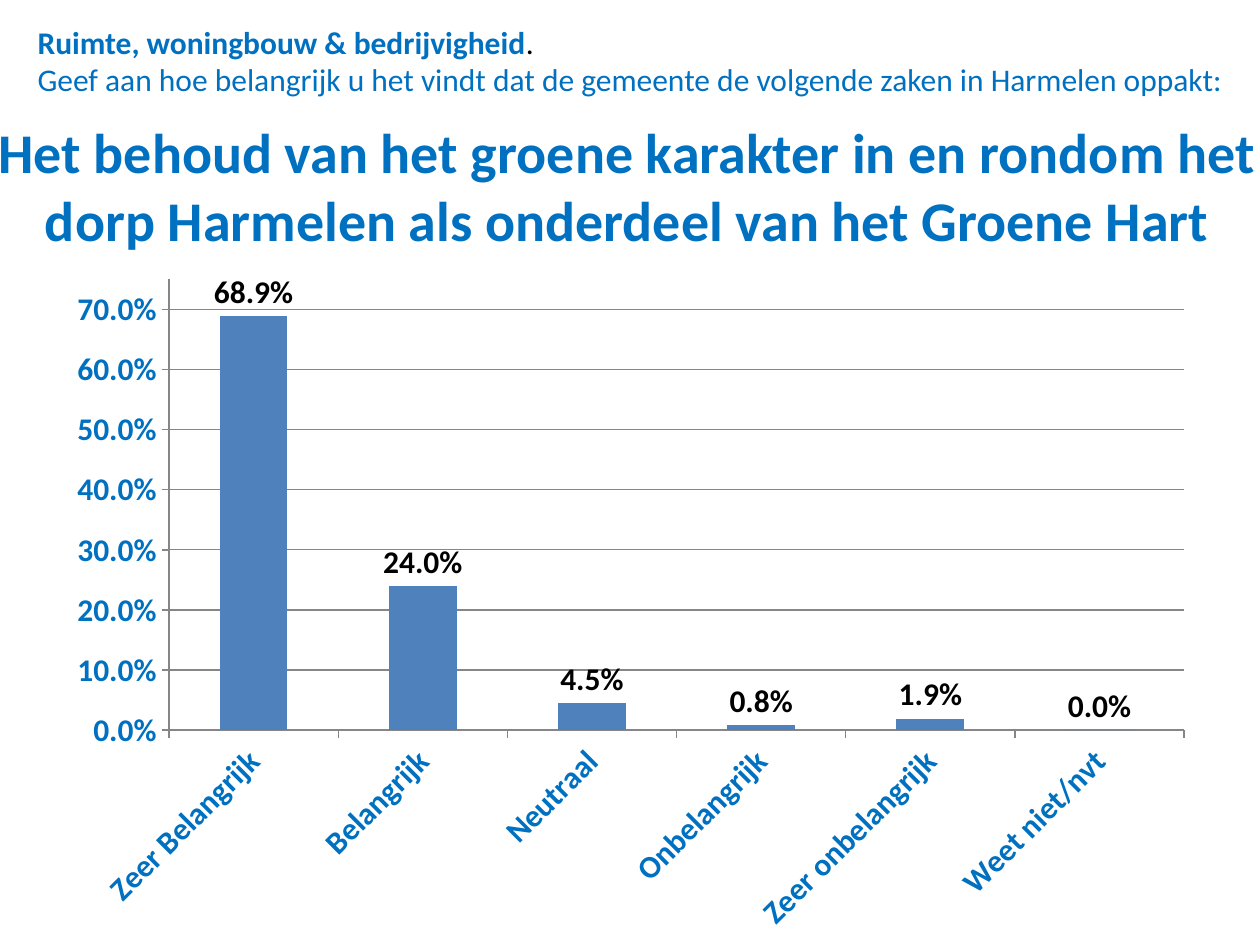
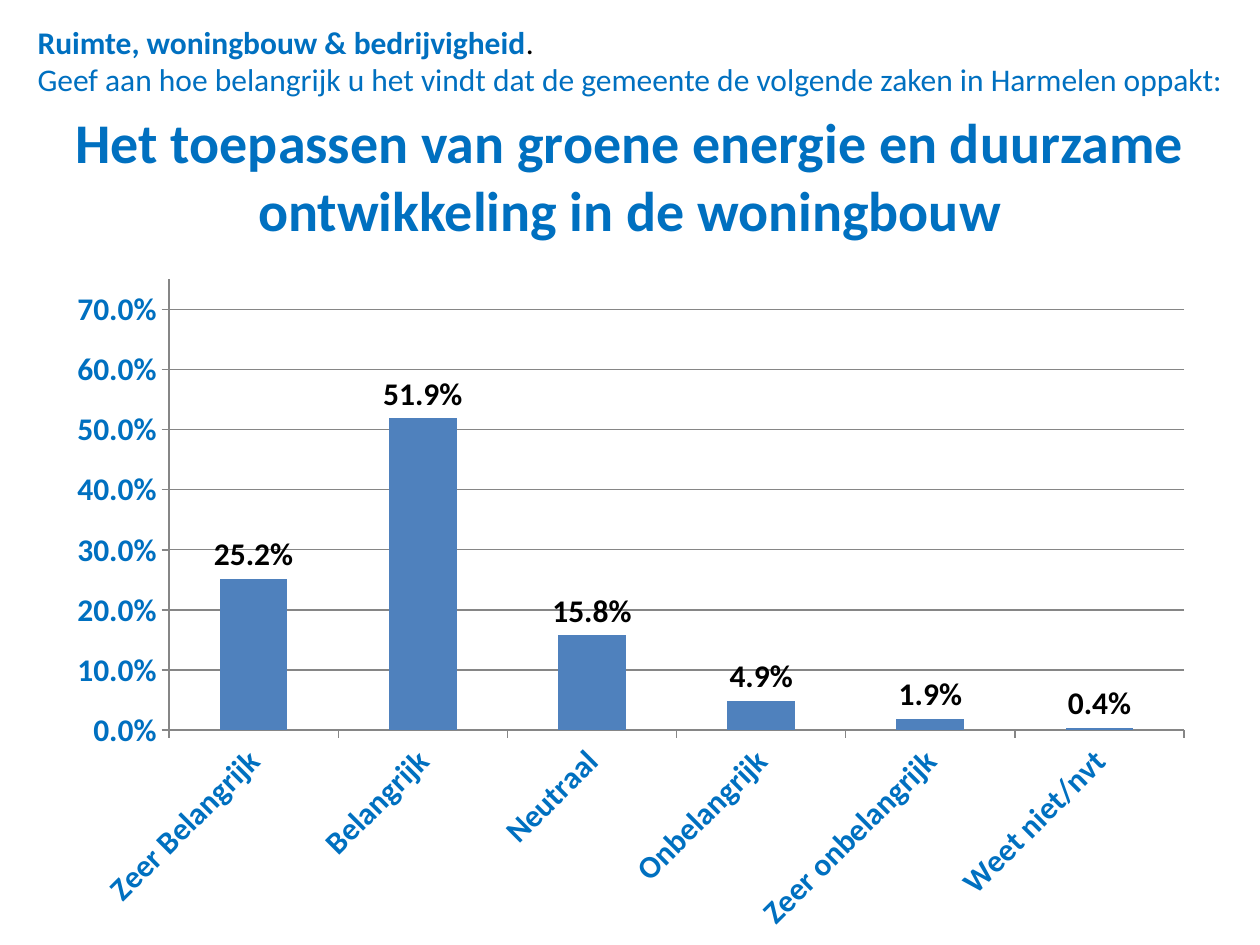
from dataclasses import dataclass

from pptx import Presentation
from pptx.chart.data import CategoryChartData
from pptx.dml.color import RGBColor
from pptx.enum.chart import XL_CHART_TYPE, XL_LABEL_POSITION, XL_TICK_MARK
from pptx.enum.text import MSO_ANCHOR, MSO_AUTO_SIZE, PP_ALIGN
from pptx.util import Pt

COLUMNS = XL_CHART_TYPE.COLUMN_CLUSTERED
OUTSIDE_END = XL_LABEL_POSITION.OUTSIDE_END
TICK_OUT = XL_TICK_MARK.OUTSIDE
MIDDLE = MSO_ANCHOR.MIDDLE
NO_AUTOFIT = MSO_AUTO_SIZE.NONE
CENTER = PP_ALIGN.CENTER

COLORS = {"heading": "0070C0", "column": "4F81BD", "text": "000000", "line": "868686"}
FONT = "Calibri"
PERCENT = "0.0%"
TITLE_ONLY = 5
LABEL_ROTATION = "-2700000"  # 45 degrees, in 60000ths

THEME = "Ruimte, woningbouw & bedrijvigheid"
QUESTION = "Geef aan hoe belangrijk u het vindt dat de gemeente de volgende zaken in Harmelen oppakt:"
ANSWERS = ("Zeer Belangrijk", "Belangrijk", "Neutraal", "Onbelangrijk",
           "Zeer onbelangrijk", "Weet niet/nvt")


@dataclass(frozen=True)
class Frame:
    left: float
    top: float
    width: float
    height: float

    def lengths(self) -> tuple:
        return Pt(self.left), Pt(self.top), Pt(self.width), Pt(self.height)


@dataclass(frozen=True)
class Topic:
    title: str
    title_frame: Frame
    shares: tuple


INTRO_FRAME = Frame(14.4, 9.4, 700.6, 72.7)
CHART_FRAME = Frame(31, 152, 658.8, 388)

TOPICS = (
    Topic("Het behoud van het groene karakter in en rondom het dorp Harmelen "
          "als onderdeel van het Groene Hart",
          Frame(-11.5, 77, 740, 96.5), (0.689, 0.24, 0.045, 0.008, 0.019, 0)),
    Topic("Het toepassen van groene energie en duurzame ontwikkeling in de woningbouw",
          Frame(0, 71.3, 720, 96.5), (0.252, 0.519, 0.158, 0.049, 0.019, 0.004)),
)


def color(name: str) -> RGBColor:
    return RGBColor.from_string(COLORS[name])


def style_font(font, size: float, color_name: str, bold: bool) -> None:
    font.name = FONT
    font.size = Pt(size)
    font.bold = bold
    font.color.rgb = color(color_name)


def set_title(page, topic: Topic) -> None:
    title = page.shapes.title
    title.left, title.top, title.width, title.height = topic.title_frame.lengths()
    frame = title.text_frame
    frame.text = topic.title
    frame.word_wrap = True
    frame.auto_size = NO_AUTOFIT
    frame.vertical_anchor = MIDDLE
    frame.margin_bottom = Pt(42.6)  # lifts the title clear of the chart
    para = frame.paragraphs[0]
    para.alignment = CENTER
    style_font(para.font, 32, "heading", True)


def add_intro(page) -> None:
    box = page.shapes.add_textbox(*INTRO_FRAME.lengths())
    box.text_frame.word_wrap = True
    para = box.text_frame.paragraphs[0]
    para.font.name = FONT
    para.font.size = Pt(18)
    for text, color_name, bold in ((THEME, "heading", True), (".", "text", False),
                                   (QUESTION, "heading", False)):
        if text == QUESTION:
            para.add_line_break()
        span = para.add_run()
        span.text = text
        span.font.bold = bold
        span.font.color.rgb = color(color_name)


def add_answer_chart(page, shares: tuple) -> None:
    data = CategoryChartData(number_format=PERCENT)
    data.categories = ANSWERS
    data.add_series("Series 1", shares)
    chart = page.shapes.add_chart(COLUMNS, *CHART_FRAME.lengths(), data).chart
    chart.has_title = False
    chart.has_legend = False
    style_font(chart.font, 18, "text", False)

    # Axes
    for axis in (chart.category_axis, chart.value_axis):
        axis.major_tick_mark = TICK_OUT
        axis.format.line.color.rgb = color("line")
        style_font(axis.tick_labels.font, 18, "heading", True)
    answer_text = chart.category_axis.tick_labels.font
    answer_text.bold = True
    body = chart.category_axis._element.txPr.bodyPr
    body.set("rot", LABEL_ROTATION)
    body.set("vert", "horz")
    scale = chart.value_axis
    scale.minimum_scale, scale.maximum_scale, scale.major_unit = 0, 0.75, 0.1
    scale.tick_labels.number_format = PERCENT
    scale.tick_labels.number_format_is_linked = False
    scale.has_major_gridlines = True
    scale.major_gridlines.format.line.color.rgb = color("line")

    # Columns and their labels
    plot = chart.plots[0]
    plot.gap_width = 150
    plot.vary_by_categories = False
    fill = plot.series[0].format.fill
    fill.solid()
    fill.fore_color.rgb = color("column")
    plot.has_data_labels = True
    labels = plot.data_labels
    labels.show_value = True
    labels.position = OUTSIDE_END
    labels.number_format = PERCENT
    labels.number_format_is_linked = False
    style_font(labels.font, 18, "text", True)


def main() -> None:
    deck = Presentation()
    deck.slide_width, deck.slide_height = Pt(720), Pt(540)
    for topic in TOPICS:
        page = deck.slides.add_slide(deck.slide_layouts[TITLE_ONLY])
        set_title(page, topic)
        add_answer_chart(page, topic.shares)
        add_intro(page)
    deck.save("out.pptx")


if __name__ == "__main__":
    main()
